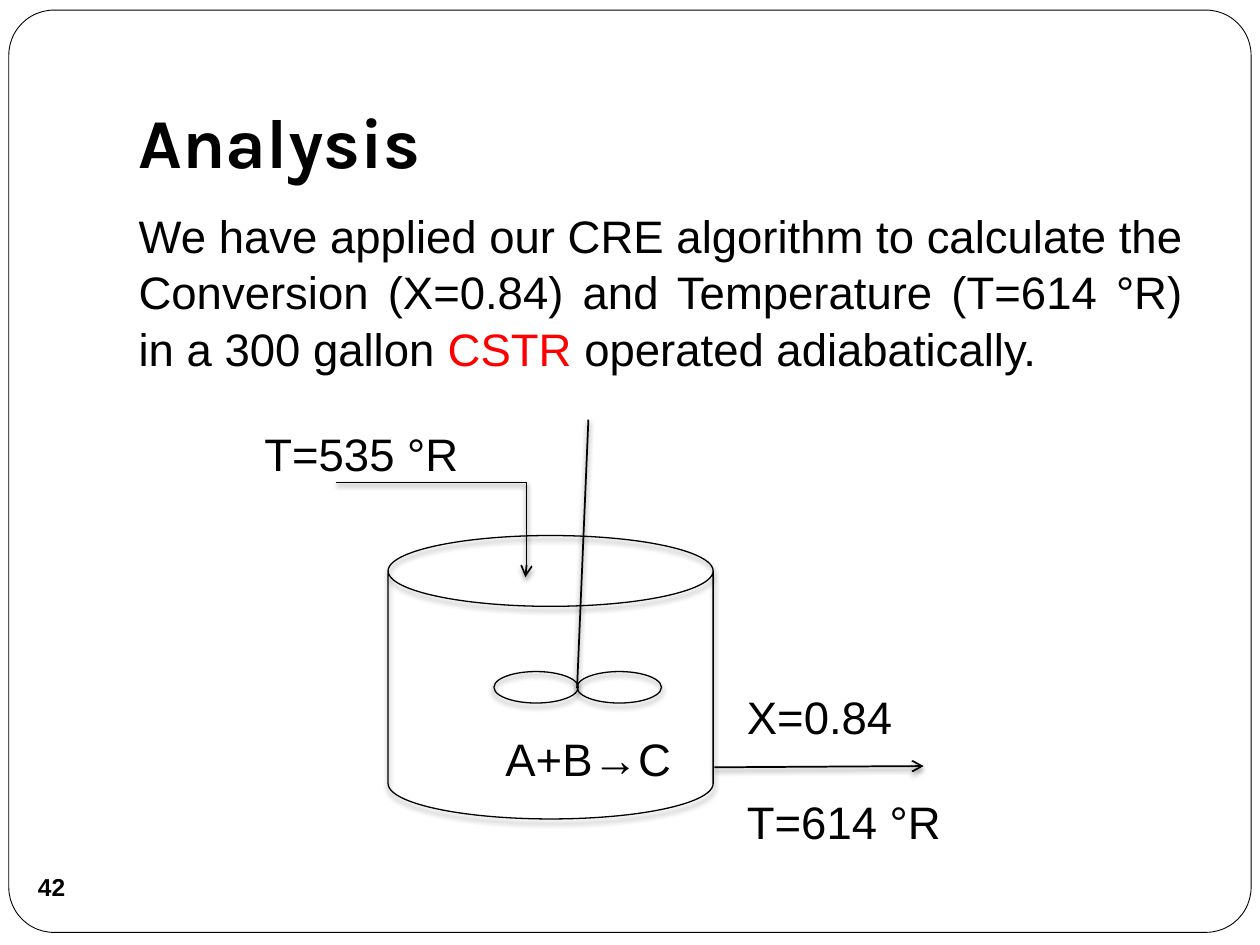
from lxml import etree
from pptx import Presentation
from pptx.dml.color import RGBColor
from pptx.enum import shapes, text
from pptx.oxml import ns
from pptx.util import Inches, Pt

BLACK = RGBColor(0, 0, 0)
WHITE = RGBColor(255, 255, 255)
RED = RGBColor(255, 0, 0)
SHAPE, LINE = shapes.MSO_SHAPE, shapes.MSO_CONNECTOR
ALIGN, ANCHOR = text.PP_ALIGN, text.MSO_ANCHOR

# Content
TITLE = "Analysis"
PAGE = "42"
BODY = [
    ("We have applied our CRE algorithm to calculate the Conversion (X=0.84) "
     "and Temperature (T=614 °R) in a 300 gallon ", BLACK),
    ("CSTR", RED),
    (" operated adiabatically.", BLACK),
]
VESSEL = [  # preset, (left, top, width, height)
    (SHAPE.CAN, (3.08, 4.25, 2.58, 2.25)),
    (SHAPE.OVAL, (3.92, 5.33, 0.67, 0.25)),
    (SHAPE.OVAL, (4.58, 5.33, 0.67, 0.25)),
]
STREAMS = [  # type, (from x, from y, to x, to y), arrow
    (LINE.ELBOW, (2.67, 3.83, 4.17, 4.58), True),
    (LINE.STRAIGHT, (5.67, 6.09, 7.33, 6.08), True),
    (LINE.STRAIGHT, (4.67, 3.33, 4.58, 5.46), False),
]
LABELS = [  # text, (left, top, width), alignment
    ("T=535 °R", (2, 3.33, 2.67), ALIGN.LEFT),
    ("X=0.84", (5.83, 5.42, 2.67), ALIGN.LEFT),
    ("T=614 °R", (5.83, 6.25, 2.67), ALIGN.LEFT),
    ("A+B→C", (3.67, 5.75, 2), ALIGN.CENTER),
]


def box(*lengths):
    return [Inches(v) for v in lengths]


def style(font, size, name="Arial", bold=False):
    font.size, font.name, font.bold = Pt(size), name, bold
    font.color.rgb = BLACK


def sub(parent, tag, **attrs):
    return etree.SubElement(parent, ns.qn(tag), attrs)


def outline(sp, width):
    sp.line.color.rgb = BLACK
    sp.line.width = Pt(width)


def add_shadow(sp):
    effects = sub(sp._element.spPr, "a:effectLst")
    shadow = sub(effects, "a:outerShdw", blurRad=str(Pt(3)), dist=str(Pt(2)),
                 dir="5400000", rotWithShape="0")
    sub(sub(shadow, "a:srgbClr", val="000000"), "a:alpha", val="50000")


def place(sp, *lengths):
    sp.left, sp.top, sp.width, sp.height = box(*lengths)


prs = Presentation()
prs.slide_width, prs.slide_height = box(10, 7.5)
s = prs.slides.add_slide(prs.slide_layouts[1])

# Rounded frame, behind everything
frame = s.shapes.add_shape(SHAPE.ROUNDED_RECTANGLE, *box(0.07, 0.08, 9.86, 7.32))
frame.adjustments[0] = 0.049
frame.shadow.inherit = False
frame.fill.solid()
frame.fill.fore_color.rgb = WHITE
outline(frame, 0.5)
s.shapes._spTree.insert(2, frame._element)

# Title
title = s.shapes.title
place(title, 1, 0.3, 8.5, 1.25)
tf = title.text_frame
tf.text = TITLE
tf.vertical_anchor = ANCHOR.BOTTOM
tf.margin_bottom = Inches(0.1)
p = tf.paragraphs[0]
p.alignment = ALIGN.LEFT
style(p.font, 40, "Karla", True)

# Page number
number = s.shapes.add_shape(SHAPE.OVAL, *box(0.16, 6.79, 0.5, 0.5))
number.shadow.inherit = False
number.fill.background()
number.line.fill.background()
tf = number.text_frame
tf.margin_left = tf.margin_top = tf.margin_right = tf.margin_bottom = 0
tf.word_wrap = False
tf.vertical_anchor = ANCHOR.MIDDLE
tf.text = PAGE
p = tf.paragraphs[0]
p.alignment = ALIGN.CENTER
style(p.font, 14, bold=True)

# Body
body = s.placeholders[1]
place(body, 1, 1.58, 8.5, 5)
p = body.text_frame.paragraphs[0]
p.alignment = ALIGN.JUSTIFY
p.space_before = Pt(5.8)
p.line_spacing = 1.04
style(p.font, 26)
pPr = p._p.get_or_add_pPr()
pPr.set("marL", "0")
pPr.set("indent", "0")
pPr.insert_element_before(etree.Element(ns.qn("a:buNone")), "a:tabLst", "a:defRPr")
for words, color in BODY:
    r = p.add_run()
    r.text = words
    r.font.color.rgb = color

# Reactor diagram
reactor = s.shapes.add_group_shape().shapes
for preset, at in VESSEL:
    sp = reactor.add_shape(preset, *box(*at))
    sp.fill.background()
    outline(sp, 0.75)
    add_shadow(sp)

for kind, ends, arrow in STREAMS:
    line = reactor.add_connector(kind, *box(*ends))
    outline(line, 1)
    if arrow:
        sub(line.line._get_or_add_ln(), "a:tailEnd", type="arrow")
    if kind == LINE.ELBOW:  # bend at the far end
        guides = line._element.spPr.find(ns.qn("a:prstGeom")).get_or_add_avLst()
        sub(guides, "a:gd", name="adj1", fmla="val 100600")
    add_shadow(line)

for words, at, align in LABELS:
    tf = reactor.add_textbox(*box(*at, 0.54)).text_frame
    tf.word_wrap = True
    tf.auto_size = text.MSO_AUTO_SIZE.SHAPE_TO_FIT_TEXT
    tf.text = words
    p = tf.paragraphs[0]
    p.alignment = align
    style(p.font, 26)

prs.save("out.pptx")
